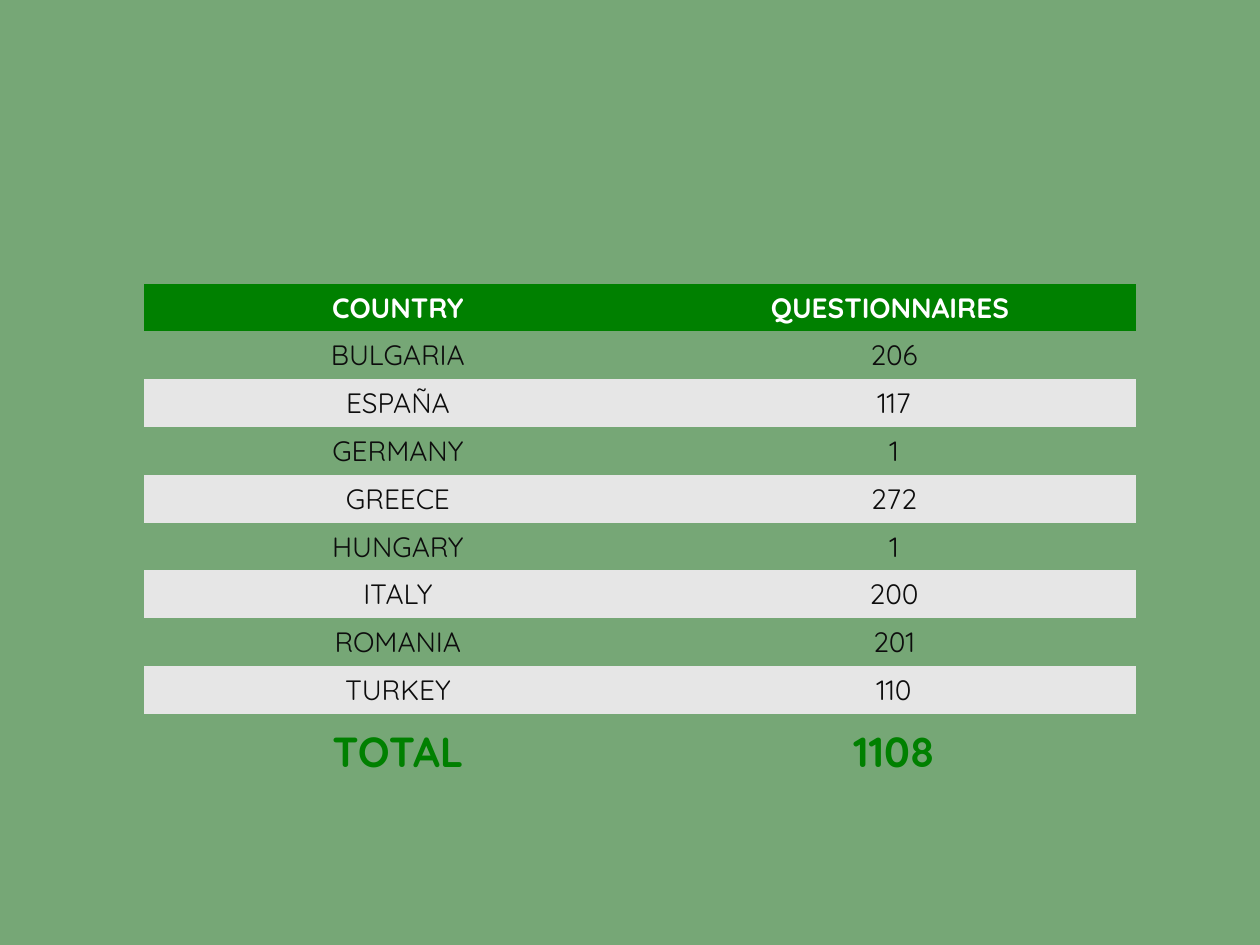
from dataclasses import dataclass

from pptx import Presentation
from pptx.dml.color import RGBColor
from pptx.enum.text import MSO_ANCHOR, PP_ALIGN
from pptx.util import Pt

CENTER = PP_ALIGN.CENTER
MIDDLE, BOTTOM = MSO_ANCHOR.MIDDLE, MSO_ANCHOR.BOTTOM
NO_STYLE_NO_GRID = "{2D5ABB26-0587-4C30-8999-92F81FD0307C}"


@dataclass(frozen=True)
class Theme:
    font: str = "Quicksand"
    background: str = "76A776"
    accent: str = "008000"
    band: str = "E6E6E6"
    ink: str = "0D0D0D"
    white: str = "FFFFFF"
    body_size: int = 16
    total_size: int = 24


THEME = Theme()
HEADER = ("COUNTRY", "QUESTIONNAIRES ")
COUNTRIES = (
    ("BULGARIA", "206"),
    ("ESPAÑA", "117"),
    ("GERMANY", "1"),
    ("GREECE", "272"),
    ("HUNGARY", "1"),
    ("ITALY", "200"),
    ("ROMANIA", "201"),
    ("TURKEY", "110"),
)
TOTAL = ("TOTAL", "1108")
COLUMN_WIDTHS = (290.6, 276.4)
ROW_HEIGHT, TOTAL_HEIGHT = 27.32, 43.2


def write(cell, text, *, size=THEME.body_size, color=THEME.ink, bold=False,
          align=CENTER, anchor=MIDDLE):
    """Put formatted text into a table cell."""
    cell.text = text
    cell.vertical_anchor = anchor
    paragraph = cell.text_frame.paragraphs[0]
    paragraph.alignment = align
    font = paragraph.runs[0].font
    font.name, font.size, font.bold = THEME.font, Pt(size), bold
    font.color.rgb = RGBColor.from_string(color)


def paint(fill, color):
    """Fill with a solid colour, or with nothing when there is none."""
    if color:
        fill.solid()
        fill.fore_color.rgb = RGBColor.from_string(color)
    else:
        fill.background()


def fill_row(row, texts, *, height=ROW_HEIGHT, fill=None, **text_format):
    """Write and colour one table row."""
    row.height = Pt(height)
    for cell, text in zip(row.cells, texts):
        paint(cell.fill, fill)
        write(cell, text, **text_format)


def add_sample_table(slide):
    """Add the table of questionnaires by country."""
    height = ROW_HEIGHT * (len(COUNTRIES) + 1) + TOTAL_HEIGHT
    frame = slide.shapes.add_table(
        len(COUNTRIES) + 2, len(COLUMN_WIDTHS),
        Pt(82.1), Pt(162.1), Pt(sum(COLUMN_WIDTHS)), Pt(height))
    table = frame.table
    table.horz_banding = False
    table._tbl.tblPr[0].text = NO_STYLE_NO_GRID
    for column, width in zip(table.columns, COLUMN_WIDTHS):
        column.width = Pt(width)

    header, *countries, total = table.rows
    fill_row(header, HEADER, fill=THEME.accent, color=THEME.white, bold=True)
    for index, (row, texts) in enumerate(zip(countries, COUNTRIES)):
        fill_row(row, texts, fill=THEME.band if index % 2 else None, anchor=BOTTOM)
    fill_row(total, TOTAL, height=TOTAL_HEIGHT, size=THEME.total_size,
             color=THEME.accent, bold=True)


def main():
    """Build the sample size slide."""
    deck = Presentation()
    deck.slide_width, deck.slide_height = Pt(720), Pt(540)
    slide = deck.slides.add_slide(deck.slide_layouts[6])
    paint(slide.background.fill, THEME.background)
    add_sample_table(slide)
    deck.save("out.pptx")


if __name__ == "__main__":
    main()
